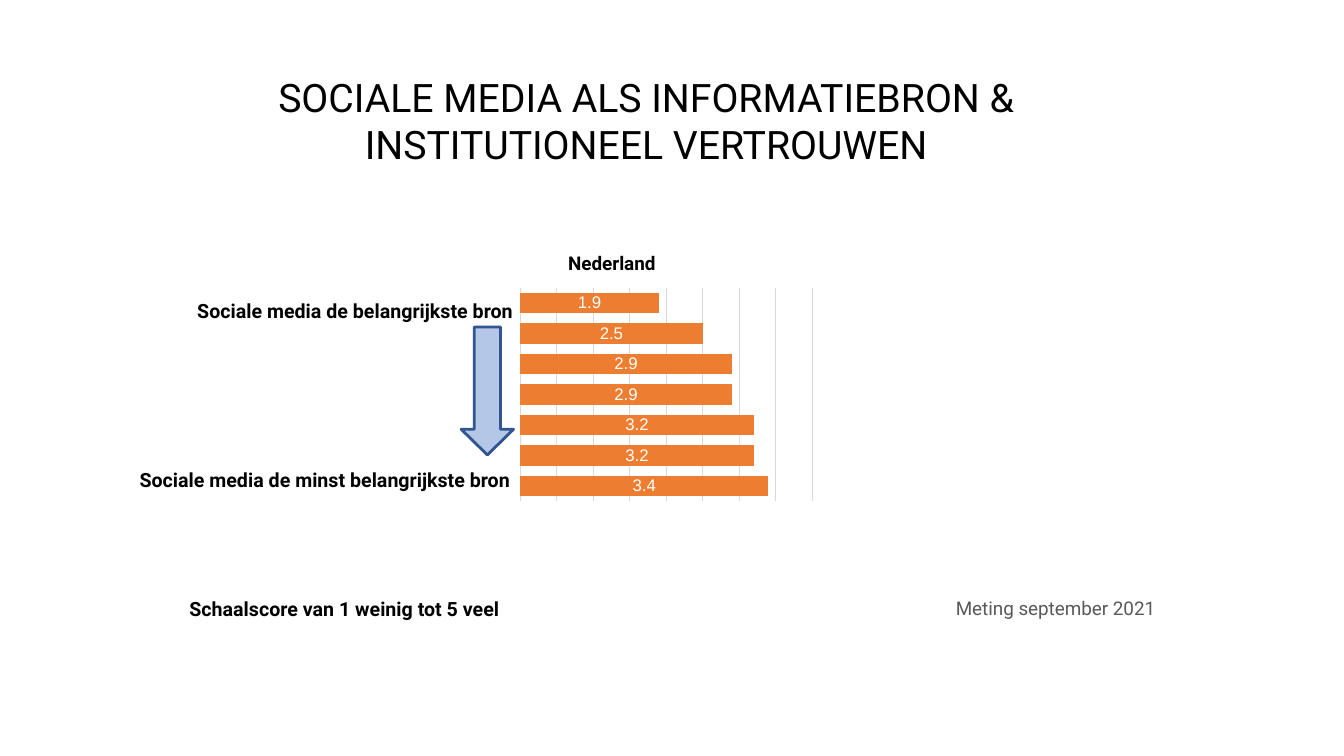
from pptx import Presentation
from pptx.chart.data import CategoryChartData
from pptx.dml.color import RGBColor
from pptx.enum import chart as ch, shapes, text
from pptx.util import Pt

BLACK = RGBColor(0x00, 0x00, 0x00)
WHITE = RGBColor(0xFF, 0xFF, 0xFF)
GREY = RGBColor(0x59, 0x59, 0x59)
GRID = RGBColor(0xD9, 0xD9, 0xD9)
ORANGE = RGBColor(0xED, 0x7D, 0x31)
PALE_BLUE = RGBColor(0xB4, 0xC7, 0xE7)
BLUE = RGBColor(0x32, 0x54, 0x91)
LEFT, CENTER, RIGHT = text.PP_ALIGN.LEFT, text.PP_ALIGN.CENTER, text.PP_ALIGN.RIGHT


def style_font(font, color, **values):
    for name, value in values.items():
        setattr(font, name, value)
    font.color.rgb = color


deck = Presentation()
deck.slide_width, deck.slide_height = Pt(960), Pt(540)
page = deck.slides.add_slide(deck.slide_layouts[6])

labels = [
    ("SOCIALE MEDIA ALS INFORMATIEBRON & INSTITUTIONEEL VERTROUWEN",
     (175, 49, 573, 75), CENTER, 28, False, BLACK),
    ("Nederland", (341.3, 176.4, 191.5, 23.8), CENTER, 13.5, True, BLACK),
    ("Sociale media de belangrijkste bron",
     (98.6, 210.2, 275, 24.5), RIGHT, 14, True, BLACK),
    ("Sociale media de minst belangrijkste bron",
     (52.6, 330.5, 319, 24.5), RIGHT, 14, True, BLACK),
    ("Meting september 2021",
     (658.8, 422.6, 173.5, 23.8), RIGHT, 13.5, False, GREY),
    ("Schaalscore van 1 weinig tot 5 veel",
     (128.2, 422.6, 378.7, 24.5), LEFT, 14, True, BLACK),
]
for wording, place, align, size, bold, color in labels:
    box = page.shapes.add_textbox(*map(Pt, place))
    box.text_frame.word_wrap = True
    para = box.text_frame.paragraphs[0]
    para.alignment = align
    span = para.add_run()
    span.text = wording
    style_font(span.font, color, name="Roboto", size=Pt(size), bold=bold)

arrow = page.shapes.add_shape(
    shapes.MSO_SHAPE.RIGHT_ARROW, Pt(302.4), Pt(260.6), Pt(91.4), Pt(37.4))
arrow.rotation = 90
arrow.adjustments[0] = 0.5
arrow.adjustments[1] = 0.49
arrow.shadow.inherit = False
arrow.fill.solid()
arrow.fill.fore_color.rgb = PALE_BLUE
arrow.line.color.rgb = BLUE
arrow.line.width = Pt(2)

scores = CategoryChartData()
scores.categories = [str(rank) for rank in range(1, 8)]
scores.add_series("Nederland", (1.9, 2.5, 2.9, 2.9, 3.2, 3.2, 3.4))
chart = page.shapes.add_chart(
    ch.XL_CHART_TYPE.BAR_CLUSTERED,
    Pt(367.2), Pt(202.3), Pt(217.4), Pt(159.1), scores).chart
chart.has_title = False
chart.has_legend = False
style_font(chart.font, BLACK, name="Calibri", size=Pt(10))

chart.category_axis.reverse_order = True
chart.category_axis.visible = False
value_axis = chart.value_axis
value_axis.visible = False
value_axis.minimum_scale = 0
value_axis.maximum_scale = 4
value_axis.major_unit = 0.5
value_axis.has_major_gridlines = True
value_axis.major_gridlines.format.line.color.rgb = GRID
value_axis.major_gridlines.format.line.width = Pt(0.75)

plot = chart.plots[0]
plot.gap_width = 50
plot.vary_by_categories = False
bars = plot.series[0]
bars.format.fill.solid()
bars.format.fill.fore_color.rgb = ORANGE
values = bars.data_labels
values.show_value = True
values.position = ch.XL_LABEL_POSITION.CENTER
values.number_format = "#,##0.0"
values.number_format_is_linked = False
style_font(values.font, WHITE, name="Arial", size=Pt(12))

deck.save("out.pptx")
